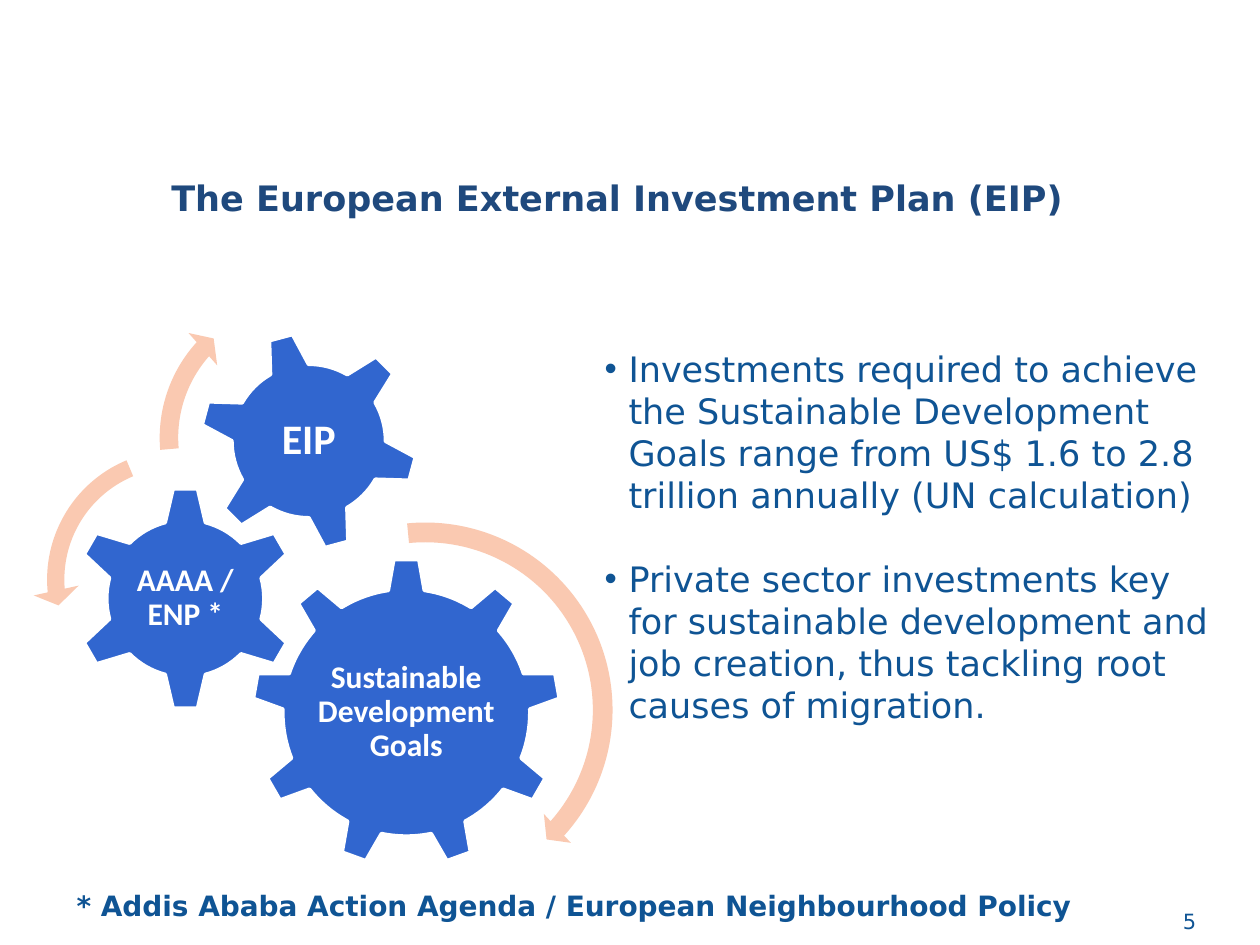
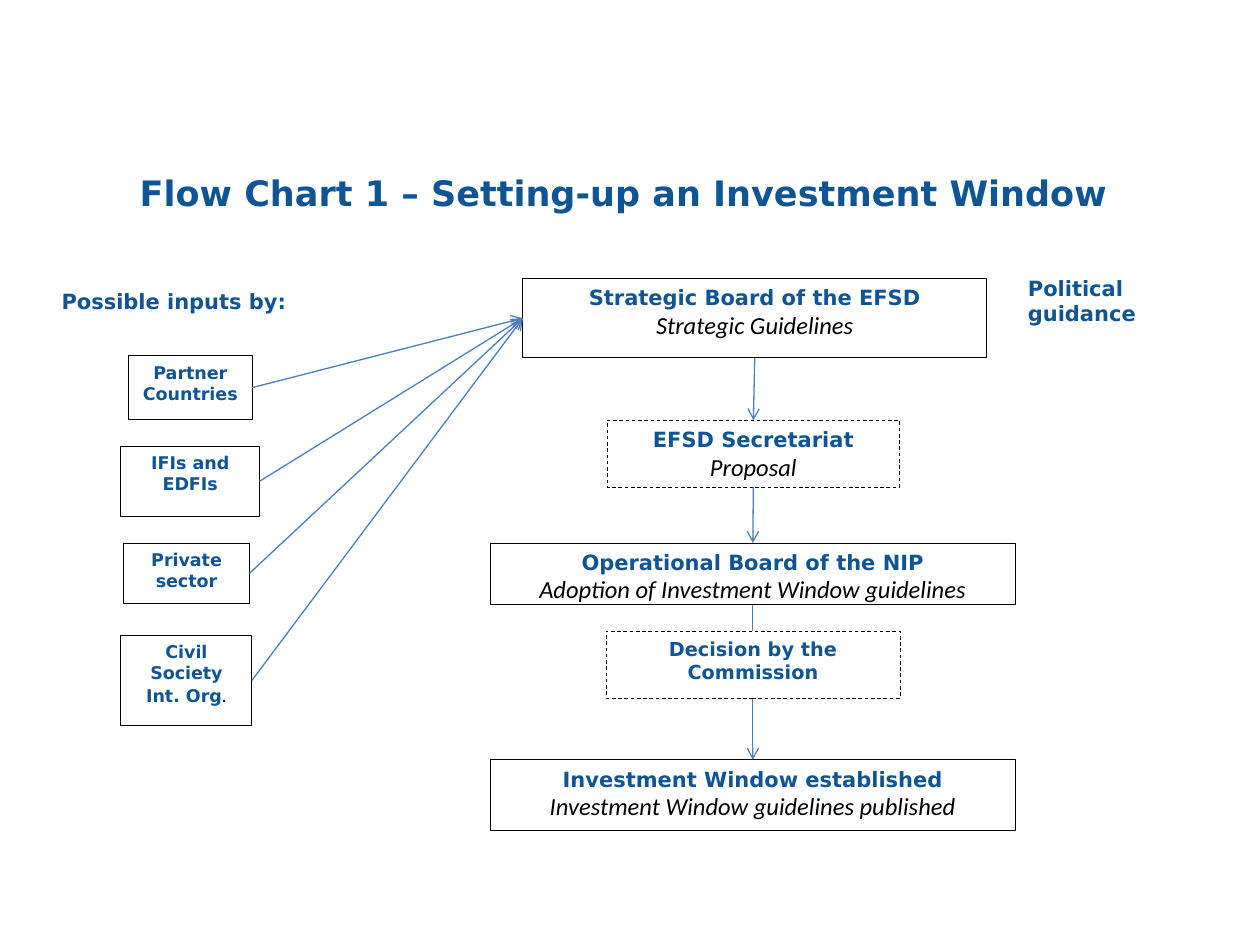
"""Build two slides on the European External Investment Plan: gears and a flow chart."""
from pptx import Presentation
from pptx.dml.color import RGBColor
from pptx.enum.dml import MSO_LINE
from pptx.enum.shapes import MSO_CONNECTOR, MSO_SHAPE
from pptx.enum.text import MSO_ANCHOR, PP_ALIGN
from pptx.oxml.ns import qn
from pptx.util import Pt
from lxml.etree import SubElement

COLORS = {
    "navy": "1F497D", "blue": "0F5494", "gear": "3166CF", "arrow": "FAC9B1",
    "line": "4B7EBC", "white": "FFFFFF", "black": "000000",
}
COLORS = {name: RGBColor.from_string(value) for name, value in COLORS.items()}
SANS, BODY = "DejaVu Sans", "Calibri"
STYLES = {
    "plan title": (SANS, 20, "navy", True, False),
    "chart title": (SANS, 20, "blue", True, False),
    "bullet": (SANS, 20, "blue", False, False),
    "footnote": (SANS, 16, "blue", True, False),
    "number": (SANS, 12, "blue", False, False),
    "heading": (SANS, 12, "blue", True, False),
    "decision": (SANS, 11, "blue", True, False),
    "input": (SANS, 10, "blue", True, False),
    "full stop": (BODY, 11, "black", False, False),
    "detail": (BODY, 14, "black", False, True),
    "gear": (BODY, 18, "white", True, False),
    "large gear": (BODY, 24, "white", True, False),
}


def write(box, paragraphs, align=PP_ALIGN.LEFT, anchor=MSO_ANCHOR.TOP):
    """Fill a box with paragraphs, each a list of (text, style) runs."""
    frame = box.text_frame
    frame.word_wrap = True
    frame.vertical_anchor = anchor
    for index, runs in enumerate(paragraphs):
        paragraph = frame.add_paragraph() if index else frame.paragraphs[0]
        paragraph.alignment = align
        for text, style in runs:
            span = paragraph.add_run()
            span.text = text
            name, size, color, bold, italic = STYLES[style]
            span.font.name, span.font.size = name, Pt(size)
            span.font.bold, span.font.italic = bold, italic
            span.font.color.rgb = COLORS[color]
    return frame


def add_panel(page, area, paragraphs, dashed=False):
    """Add a white outlined rectangle with centred text."""
    panel = page.shapes.add_shape(MSO_SHAPE.RECTANGLE, *map(Pt, area))
    panel.shadow.inherit = False
    panel.fill.solid()
    panel.fill.fore_color.rgb = COLORS["white"]
    panel.line.color.rgb = COLORS["black"]
    panel.line.width = Pt(0.5)
    if dashed:
        panel.line.dash_style = MSO_LINE.DASH
    write(panel, paragraphs, PP_ALIGN.CENTER)
    return panel


deck = Presentation()
deck.slide_width, deck.slide_height = Pt(720), Pt(540)
blank = deck.slide_layouts[6]
plan_page, chart_page = deck.slides.add_slide(blank), deck.slides.add_slide(blank)

captions = [
    (plan_page, (0, 97.2, 705.6, 41.8), "The European External Investment Plan (EIP)",
     "plan title", PP_ALIGN.CENTER),
    (plan_page, (668.9, 515.5, 51, 16), "5", "number", PP_ALIGN.LEFT),
    (plan_page, (36.7, 504, 632, 26.6),
     "* Addis Ababa Action Agenda / European Neighbourhood Policy",
     "footnote", PP_ALIGN.LEFT),
    (chart_page, (72.7, 94.3, 600, 31.7),
     "Flow Chart 1 – Setting-up an Investment Window", "chart title", PP_ALIGN.LEFT),
    (chart_page, (580.3, 154, 108, 40), "Political guidance", "heading", PP_ALIGN.LEFT),
    (chart_page, (28.1, 161.4, 204.5, 22), "Possible inputs by:", "heading", PP_ALIGN.LEFT),
]
for page, area, text, style, align in captions:
    write(page.shapes.add_textbox(*map(Pt, area)), [[(text, style)]], align)

gears = [
    (MSO_SHAPE.GEAR_9, 144, 319, 176.4, 0, "Sustainable Development Goals", "gear", 116),
    (MSO_SHAPE.GEAR_6, 41.8, 277.9, 128.2, 0, "AAAA / ENP *", "gear", 63.4),
    (MSO_SHAPE.GEAR_6, 113.8, 189.4, 125.3, 345, "EIP", "large gear", 70.6),
]
for kind, left, top, side, rotation, text, style, label_side in gears:
    gear = plan_page.shapes.add_shape(kind, Pt(left), Pt(top), Pt(side), Pt(side))
    gear.rotation = rotation
    gear.shadow.inherit = False
    gear.fill.solid()
    gear.fill.fore_color.rgb = COLORS["gear"]
    gear.line.color.rgb = COLORS["white"]
    gear.line.width = Pt(2)
    inset = (side - label_side) / 2
    label = plan_page.shapes.add_textbox(
        Pt(left + inset), Pt(top + inset), Pt(label_side), Pt(label_side))
    frame = write(label, [[(text, style)]], PP_ALIGN.CENTER, MSO_ANCHOR.MIDDLE)
    frame.margin_left = frame.margin_right = Pt(2.2)
    frame.margin_top = frame.margin_bottom = Pt(2.2)
    frame.paragraphs[0].line_spacing = 0.9

turns = [
    (MSO_SHAPE.CIRCULAR_ARROW, 130.3, 293, 225.4, (0.05, 2.99, 25.13, 158.68, 0.05)),
    (MSO_SHAPE.LEFT_CIRCULAR_ARROW, 18.7, 249.1, 164.2, (0.06, 4.3, 104.89, 148.38, 0.08)),
    (MSO_SHAPE.CIRCULAR_ARROW, 84.2, 162, 176.4, (0.06, 3.94, 133.14, 105.08, 0.07)),
]
for kind, left, top, side, adjustments in turns:
    turn = plan_page.shapes.add_shape(kind, Pt(left), Pt(top), Pt(side), Pt(side))
    turn.shadow.inherit = False
    turn.fill.solid()
    turn.fill.fore_color.rgb = COLORS["arrow"]
    turn.line.fill.background()
    for index, value in enumerate(adjustments):
        turn.adjustments[index] = value

points = [
    "Investments required to achieve the Sustainable Development Goals range from "
    "US$ 1.6 to 2.8 trillion annually (UN calculation)",
    "Private sector investments key for sustainable development and job creation, "
    "thus tackling root causes of migration.",
]
point_box = plan_page.shapes.add_textbox(Pt(338.4), Pt(195), Pt(362.9), Pt(250))
frame = write(point_box, [[(point, "bullet")] for point in points])
for paragraph in frame.paragraphs:
    properties = paragraph._p.get_or_add_pPr()
    properties.set("marL", str(Pt(13.7)))
    properties.set("indent", str(-Pt(13.7)))
    SubElement(properties, qn("a:buFont")).set("typeface", "Arial")
    SubElement(properties, qn("a:buChar")).set("char", "•")
frame.paragraphs[1].space_before = Pt(24)

steps = [
    ((298.8, 159.1, 265, 45.4), "Strategic Board of the EFSD", "Strategic Guidelines", False),
    ((347, 240.2, 167, 38.2), "EFSD Secretariat", "Proposal", True),
    ((280.1, 310.3, 300.2, 35.3), "Operational Board of the NIP",
     "Adoption of Investment Window guidelines", False),
    ((280.1, 434.2, 300.2, 40.3), "Investment Window established",
     "Investment Window guidelines published", False),
]
step_panels = [
    add_panel(chart_page, area, [[(heading, "heading")], [(detail, "detail")]], dashed)
    for area, heading, detail, dashed in steps
]
inputs = [
    ((73.5, 203.2, 70.5, 36.7), [[("Partner Countries", "input")]]),
    ((69.1, 254.9, 79.2, 40.3), [[("IFIs and EDFIs", "input")]]),
    ((70.6, 310.3, 72, 34.6), [[("Private sector", "input")]]),
    ((69.1, 362.9, 74.9, 51.8),
     [[("Civil Society", "input")], [("Int. Org", "input"), (".", "full stop")]]),
]
input_panels = [add_panel(chart_page, area, paragraphs) for area, paragraphs in inputs]

links = [(panel, 3, step_panels[0], 1) for panel in input_panels]
links += [(upper, 2, lower, 0) for upper, lower in zip(step_panels, step_panels[1:])]
for start, start_side, end, end_side in links:
    link = chart_page.shapes.add_connector(MSO_CONNECTOR.STRAIGHT, 0, 0, 0, 0)
    link.begin_connect(start, start_side)
    link.end_connect(end, end_side)
    link.line.color.rgb = COLORS["line"]
    link.line.width = Pt(0.75)
    properties = link.element.spPr
    SubElement(properties.find(qn("a:ln")), qn("a:tailEnd")).set("type", "arrow")
    SubElement(properties, qn("a:effectLst"))

add_panel(chart_page, (346.3, 360.7, 168, 38.2),
          [[("Decision by the Commission", "decision")]], dashed=True)

deck.save("out.pptx")
